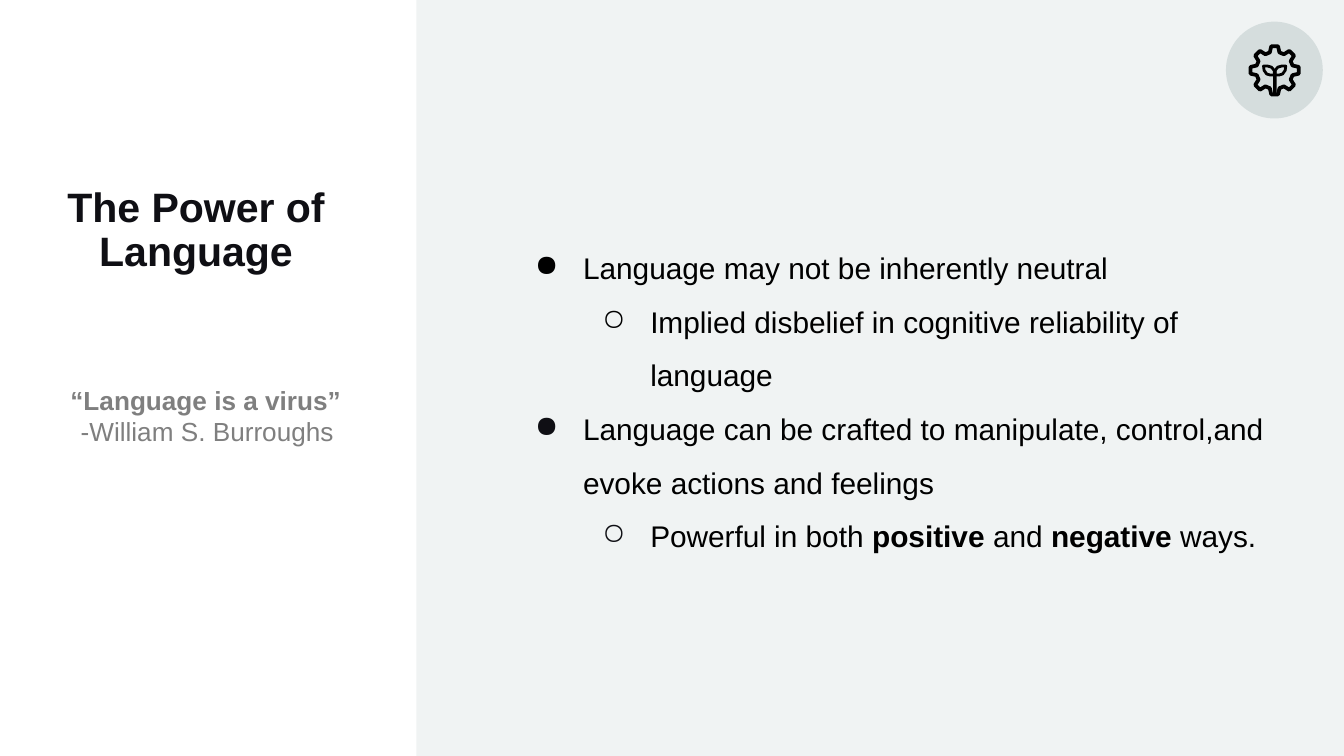
from dataclasses import dataclass
from math import cos, radians, sin

from lxml import etree
from pptx import Presentation
from pptx.dml.color import RGBColor
from pptx.enum.shapes import MSO_SHAPE
from pptx.enum.text import MSO_ANCHOR, PP_ALIGN
from pptx.oxml.ns import qn
from pptx.util import Cm, Pt

RECT, OVAL = MSO_SHAPE.RECTANGLE, MSO_SHAPE.OVAL
TOP, MIDDLE = MSO_ANCHOR.TOP, MSO_ANCHOR.MIDDLE
LEFT, CENTER, RIGHT = PP_ALIGN.LEFT, PP_ALIGN.CENTER, PP_ALIGN.RIGHT
BLACK = RGBColor(0, 0, 0)
INK = RGBColor(0x0F, 0x0F, 0x14)
GRAY = RGBColor(0x7F, 0x7F, 0x7F)
PALE = RGBColor(0xF0, 0xF3, 0xF3)
SAGE = RGBColor(0xD5, 0xDD, 0xDD)
FONT = "Arial"
WIDE, HIGH = 25.4, 14.29
SPLIT = 7.87
HUB_X, HUB_Y = 24.09, 1.33


@dataclass
class Box:
    left: float
    top: float
    width: float
    height: float

    def place(self) -> tuple:
        return Cm(self.left), Cm(self.top), Cm(self.width), Cm(self.height)


@dataclass
class Para:
    runs: list[tuple[str, bool]]
    mark: str = ""
    level: int = 0
    tint: RGBColor = BLACK


def add_mark(para, item: Para) -> None:
    props = para._p.get_or_add_pPr()
    props.set("marL", str(Cm(1.27 * (item.level + 1))))
    props.set("indent", str(-Cm(0.91)))
    tint = etree.SubElement(props, qn("a:buClr"))
    etree.SubElement(tint, qn("a:srgbClr"), val=str(item.tint))
    etree.SubElement(props, qn("a:buChar"), char=item.mark)


def add_text(slide, box: Box, items: list[Para], *, size: float, color: RGBColor,
             align=LEFT, anchor=TOP, space: float = 1.0,
             pad: tuple[float, float] = (0.25, 0.25)) -> None:
    frame = slide.shapes.add_textbox(*box.place()).text_frame
    frame.word_wrap = True
    frame.vertical_anchor = anchor
    frame.margin_left = frame.margin_right = Cm(pad[0])
    frame.margin_top = frame.margin_bottom = Cm(pad[1])
    for i, item in enumerate(items):
        para = frame.add_paragraph() if i else frame.paragraphs[0]
        para.alignment = align
        para.level = item.level
        para.line_spacing = space
        if item.mark:
            add_mark(para, item)
        for words, bold in item.runs:
            run = para.add_run()
            run.text = words
            run.font.name = FONT
            run.font.size = Pt(size)
            run.font.bold = bold
            run.font.color.rgb = color


def add_block(slide, kind, box: Box, color: RGBColor) -> None:
    shape = slide.shapes.add_shape(kind, *box.place())
    shape.shadow.inherit = False
    shape.fill.solid()
    shape.fill.fore_color.rgb = color
    shape.line.fill.background()


def add_loop(slide, spots: list[tuple[float, float]], weight: float) -> None:
    spots = [(Cm(HUB_X + x), Cm(HUB_Y + y)) for x, y in spots]
    pen = slide.shapes.build_freeform(*spots[0])
    pen.add_line_segments(spots[1:], close=True)
    shape = pen.convert_to_shape()
    shape.shadow.inherit = False
    shape.fill.background()
    shape.line.color.rgb = BLACK
    shape.line.width = Pt(weight)


def add_gear(slide) -> None:
    tooth = ((-15, 0.35), (-8, 0.46), (8, 0.46), (15, 0.35))
    turns = [(45 * n + turn, reach) for n in range(8) for turn, reach in tooth]
    add_loop(slide, [(reach * cos(radians(turn)), reach * sin(radians(turn)))
                     for turn, reach in turns], 2)
    add_block(slide, RECT, Box(HUB_X - 0.03, HUB_Y, 0.07, 0.48), BLACK)
    leaf = [(0, 0.09), (0.01, 0), (0.06, -0.06), (0.13, -0.08),
            (0.21, -0.08), (0.2, 0), (0.15, 0.07), (0.08, 0.09)]
    for side in (-1, 1):
        add_loop(slide, [(side * x, y) for x, y in leaf], 1.5)


def main() -> None:
    deck = Presentation()
    deck.slide_width, deck.slide_height = Cm(WIDE), Cm(HIGH)
    slide = deck.slides.add_slide(deck.slide_layouts[6])

    add_block(slide, RECT, Box(SPLIT, 0, WIDE - SPLIT, HIGH), PALE)
    points = [
        Para([("Language may not be inherently neutral", False)], "●"),
        Para([("Implied disbelief in cognitive reliability of language", False)], "○", 1),
        Para([("Language can be crafted to manipulate, control,and "
               "evoke actions and feelings", False)], "●", 0, INK),
        Para([("Powerful in both ", False), ("positive ", True), ("and ", False),
              ("negative ", True), ("ways.", False)], "○", 1, INK),
    ]
    add_text(slide, Box(9.5, 3.63, 15.19, 7.59), points, size=16, color=BLACK,
             anchor=MIDDLE, space=1.5)
    add_text(slide, Box(0.71, 3.4, 5.99, 2.9), [Para([("The Power of Language", True)])],
             size=22, color=INK, align=CENTER, space=0.9, pad=(0, 0.13))
    quote = Para([("“Language is a virus” ", True), ("-William S. Burroughs ", False)])
    add_text(slide, Box(0.71, 7.01, 5.99, 1.7), [quote], size=14, color=GRAY, align=RIGHT)

    add_block(slide, OVAL, Box(23.17, 0.41, 1.83, 1.83), SAGE)
    add_gear(slide)
    deck.save("out.pptx")


if __name__ == "__main__":
    main()
